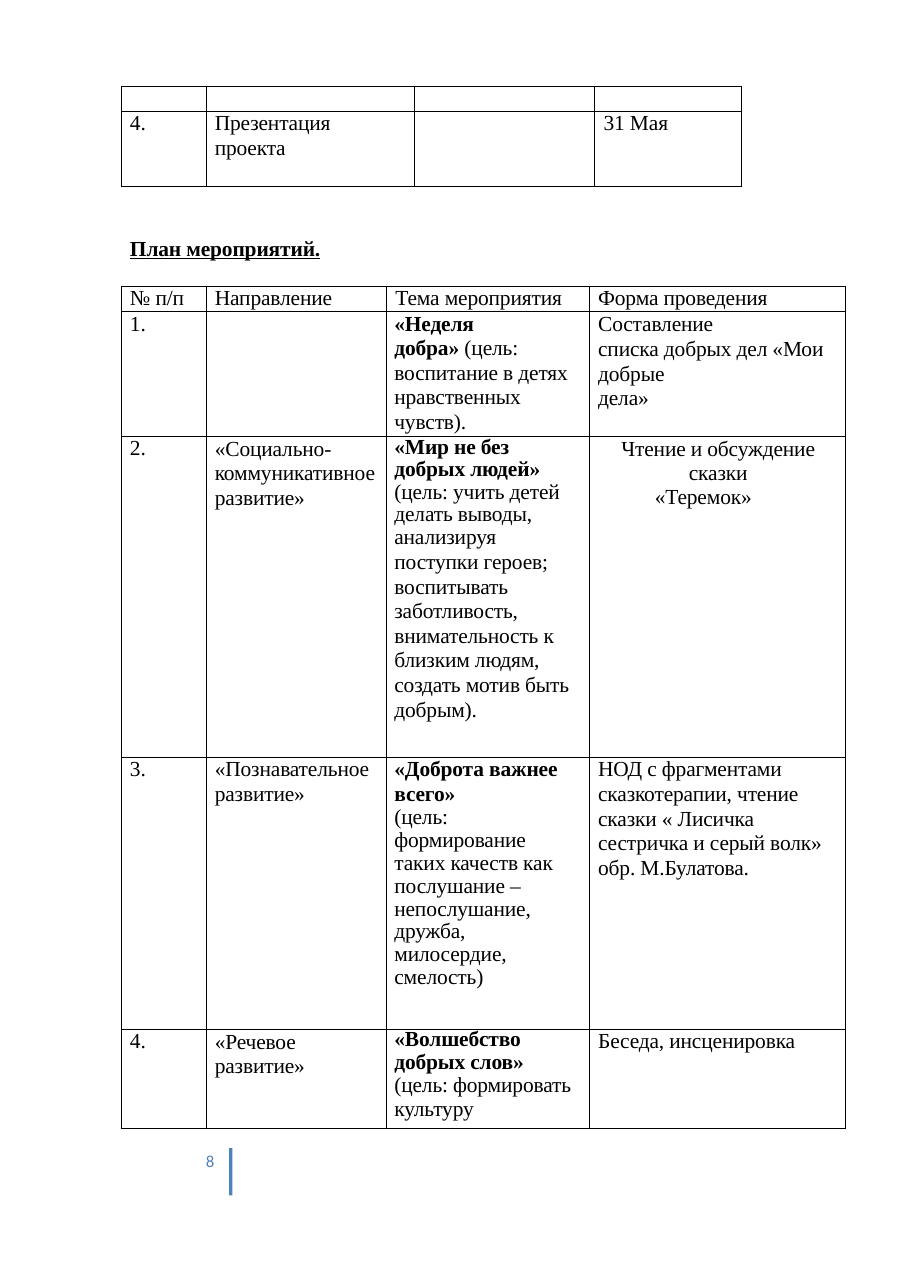
from dataclasses import dataclass

from lxml.etree import SubElement as Sub
from pptx import Presentation
from pptx.dml.color import RGBColor as RGB
from pptx.enum.shapes import MSO_SHAPE as Shape
from pptx.enum.text import MSO_ANCHOR as Anchor, MSO_AUTO_SIZE as Auto, PP_ALIGN as Align
from pptx.oxml.ns import qn
from pptx.util import Inches, Pt


@dataclass(frozen=True)
class Theme:
    """Colours, fonts and sizes of the page."""
    ink: str = "000000"
    blue: str = "4F81BC"
    serif: str = "Times New Roman"
    sans: str = "Calibri"
    body: float = 14
    small: float = 11
    blank: float = 10
    rule: float = 0.5


THEME = Theme()


def para(text, **fmt):
    """Pair a paragraph with its format."""
    return text, fmt


def put(par, text, size=THEME.body, font=THEME.serif, color=THEME.ink, line=None,
        before=0, left=0.0, right=0.0, align=Align.LEFT, under=False):
    """Write text into a paragraph; stars enclose bold words, newlines break lines."""
    par.alignment = align
    par.space_before = Pt(before)
    if line:
        par.line_spacing = line if line < 2 else Pt(line)
    props = par._p.get_or_add_pPr()
    props.set("marL", str(Inches(left)))
    props.set("marR", str(Inches(right)))
    props.set("indent", "0")
    for part, chunk in enumerate(text.split("*")):
        for row, words in enumerate(chunk.split("\n")):
            if row:
                par.add_line_break()
            if not words:
                continue
            run = par.add_run()
            run.text = words
            face = run.font
            face.name, face.size = font, Pt(size)
            face.bold, face.underline = part % 2 == 1, under
            face.color.rgb = RGB.from_string(color)
            run._r.get_or_add_rPr().set("spc", "-10")


def frame_in(shape, top=0.0):
    """Strip the margins of a text shape and return its frame."""
    frame = shape.text_frame
    frame.margin_left = frame.margin_right = frame.margin_bottom = 0
    frame.margin_top = Inches(top)
    frame.vertical_anchor = Anchor.TOP
    frame.auto_size = Auto.NONE
    frame.word_wrap = False
    return frame


def edge(cell):
    """Draw the four thin rules of a cell."""
    props = cell._tc.get_or_add_tcPr()
    for spot, side in enumerate(("lnL", "lnR", "lnT", "lnB")):
        rule = props.makeelement(qn(f"a:{side}"), {"w": str(Pt(THEME.rule))})
        Sub(Sub(rule, qn("a:solidFill")), qn("a:srgbClr"), val=THEME.ink)
        props.insert(spot, rule)


def fill_cell(cell, paras):
    """Format a cell and write its paragraphs."""
    cell.margin_left = cell.margin_right = cell.margin_top = cell.margin_bottom = 0
    cell.vertical_anchor = Anchor.TOP
    cell.fill.background()
    edge(cell)
    frame = cell.text_frame
    for spot, (text, fmt) in enumerate(paras):
        par = frame.paragraphs[0] if spot == 0 else frame.add_paragraph()
        put(par, text, **{"left": 0.08, "line": 16.1, **fmt})
    if not paras:
        Sub(frame.paragraphs[0]._p, qn("a:endParaRPr"), sz=str(int(THEME.blank * 100)))


def grid(slide, left, top, cols, rows, cells):
    """Place a ruled table with the given column widths and row heights."""
    table = slide.shapes.add_table(len(rows), len(cols), Inches(left), Inches(top),
                                   Inches(sum(cols)), Inches(sum(rows))).table
    table.first_row = table.horz_banding = False
    for col, width in zip(table.columns, cols):
        col.width = Inches(width)
    for row, height, line in zip(table.rows, rows, cells):
        row.height = Inches(height)
        for cell, paras in zip(row.cells, line):
            fill_cell(cell, paras)


def head(slide, left, top, width, height):
    """Set the underlined heading in the title placeholder."""
    title = slide.shapes.title
    title.left, title.top = Inches(left), Inches(top)
    title.width, title.height = Inches(width), Inches(height)
    put(frame_in(title, 0.01).paragraphs[0], "*План мероприятий.*",
        left=0.01, before=0.9, under=True)


def foot(slide, left, top):
    """Place the page number and the blue bar beside it."""
    box = slide.shapes.add_textbox(Inches(left), Inches(top + 0.05), Inches(0.24), Inches(0.18))
    put(frame_in(box).paragraphs[0], "8", size=THEME.small, font=THEME.sans,
        color=THEME.blue, line=11.5, left=0.04)
    bar = slide.shapes.add_shape(Shape.RECTANGLE, Inches(left + 0.25), Inches(top),
                                 Inches(0.03), Inches(0.43))
    bar.shadow.inherit = False
    bar.fill.solid()
    bar.fill.fore_color.rgb = RGB.from_string(THEME.blue)
    bar.line.fill.background()


def mark(text):
    """Make a cell of one plain line."""
    return [para(text, line=15.8)]


def theme_cell(*paras):
    """Make a cell of the topic column."""
    return [para(text, **{"left": 0.07, **fmt}) for text, fmt in paras]


DATES = [
    [[], [], [], []],
    [mark("4."),
     [para("Презентация", line=15.5), para("проекта", line=16.6)],
     [], mark("31 Мая")],
]

PLAN = [
    [[para(name, line=15.6)] for name in
     ("№ п/п", "Направление", "Тема мероприятия", "Форма проведения")],
    [mark("1."), [],
     theme_cell(para("*«Неделя\nдобра»* (цель:", line=15.8, before=0.6),
                para("воспитание в детях\nнравственных\nчувств).")),
     [para("Составление\nсписка добрых дел «Мои\nдобрые", before=0.1),
      para("дела»", line=15.9)]],
    [mark("2."),
     [para("«Социально-\nкоммуникативное развитие»", before=0.1, right=0.1)],
     theme_cell(para("*«Мир не без\nдобрых людей»*\n(цель: учить детей\n"
                     "делать выводы,\nанализируя", line=0.95),
                para("поступки героев;\nвоспитывать\nзаботливость,\n"
                     "внимательность к", before=0.4),
                para("близким людям,", line=15.5),
                para("создать мотив быть\nдобрым).", before=0.8)),
     [para("Чтение и обсуждение\nсказки", before=0.1, left=0.27, right=0.25,
           align=Align.CENTER),
      para("«Теремок»", line=15.7, left=0, right=0.25, align=Align.CENTER)]],
    [mark("3."),
     [para("«Познавательное\nразвитие»", before=0.1)],
     theme_cell(para("*«Доброта важнее\nвсего»*", before=0.3),
                para("(цель:", line=15.1),
                para("формирование\nтаких качеств как\nпослушание –\nнепослушание,\n"
                     "дружба,\nмилосердие,\nсмелость)", line=0.96, before=0.3)),
     [para("НОД с фрагментами\nсказкотерапии, чтение", before=0.1),
      para("сказки « Лисичка\nсестричка и серый волк»\nобр. М.Булатова.")]],
    [mark("4."),
     [para("«Речевое\nразвитие»", before=0.1)],
     theme_cell(para("*«Волшебство\nдобрых слов»*\n(цель: формировать", line=0.95),
                para("культуру", line=15.9)),
     mark("Беседа, инсценировка")],
]


def main():
    """Build the page and save it."""
    deck = Presentation()
    deck.slide_width, deck.slide_height = Inches(8.26), Inches(11.69)
    slide = deck.slides.add_slide(deck.slide_layouts[5])
    grid(slide, 1.1, 0.78, (0.77, 1.89, 1.64, 1.33), (0.23, 0.68), DATES)
    head(slide, 1.17, 2.12, 1.77, 0.26)
    grid(slide, 1.1, 2.6, (0.77, 1.64, 1.84, 2.32), (0.23, 1.13, 2.91, 2.47, 0.9), PLAN)
    foot(slide, 1.83, 10.42)
    deck.save("out.pptx")


if __name__ == "__main__":
    main()
